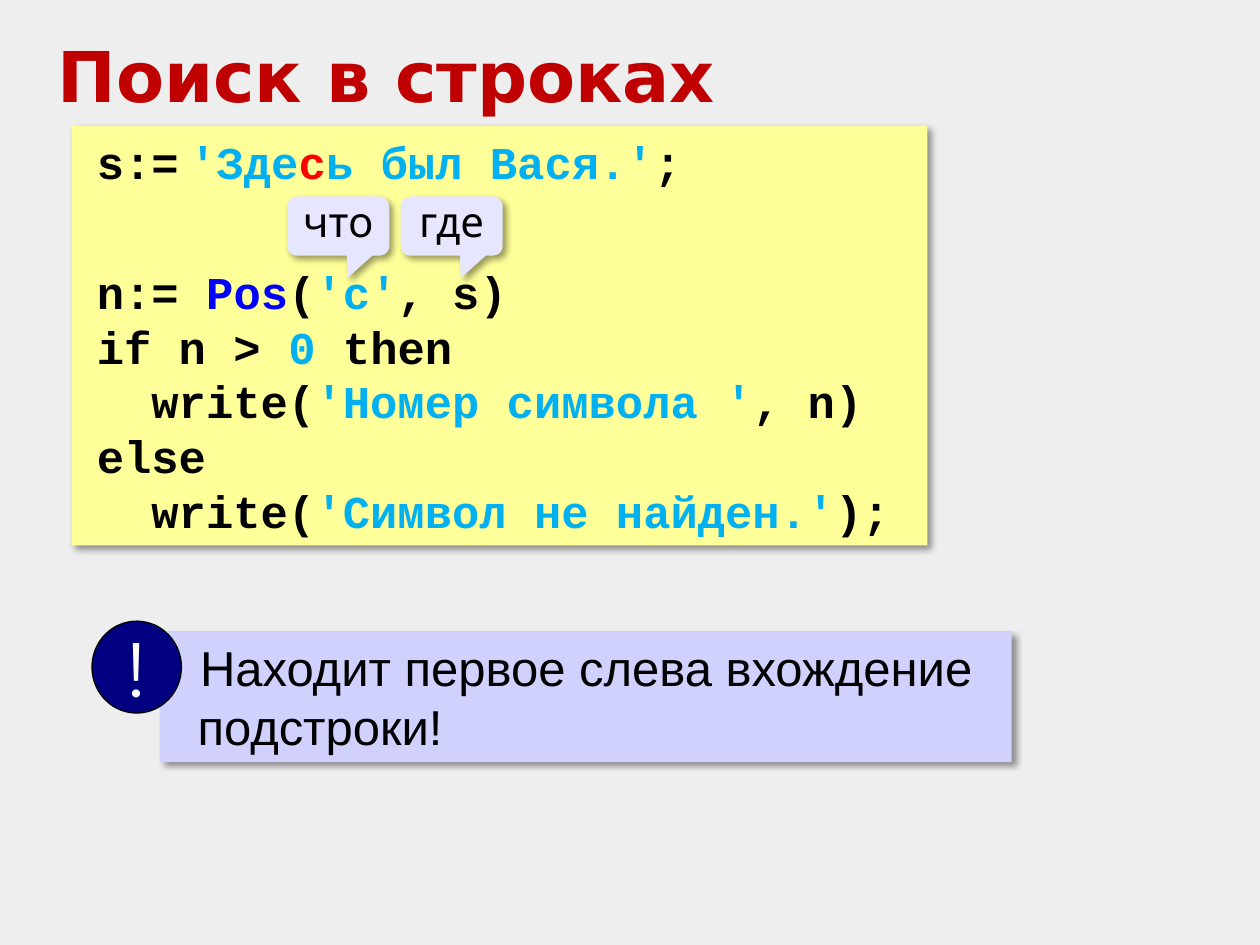
from lxml.etree import SubElement
from pptx import Presentation
from pptx.dml.color import RGBColor
from pptx.enum.shapes import MSO_SHAPE
from pptx.enum.text import MSO_ANCHOR, PP_ALIGN
from pptx.oxml.ns import qn
from pptx.util import Inches, Pt

COLORS = {
    "background": "EEEEEE", "title": "C00000", "code_box": "FFFF99",
    "callout": "E6E6FF", "note": "D1D1FF", "badge": "000080",
    "text": "000000", "literal": "00B0F0", "match": "FF0000",
    "function": "0000FF", "white": "FFFFFF",
}

# Each code line is a list of (text, color) pieces, with an optional size
CODE_LINES = [
    [("s:=", "text"), (" ", "text", 10), ("'Зде", "literal"), ("с", "match"),
     ("ь был Вася.'", "literal"), (";", "text")],
    [("n:= ", "text"), ("Pos", "function"), ("(", "text"),
     ("'с'", "literal"), (", s)", "text")],
    [("if n > ", "text"), ("0 ", "literal"), ("then", "text")],
    [("  write(", "text"), ("'Номер символа '", "literal"), (", n)", "text")],
    [("else", "text")],
    [("  write(", "text"), ("'Символ не найден.'", "literal"), (");", "text")],
]
CALLOUT_LINE = 1  # code line that leaves room above it for the callouts


def rgb(name):
    return RGBColor.from_string(COLORS[name])


def add_run(paragraph, text, font, size, color="text", bold=False):
    run = paragraph.add_run()
    run.text = text
    run.font.name = font
    run.font.size = Pt(size)
    run.font.bold = bold
    run.font.color.rgb = rgb(color)


def set_indent(paragraph, left, first):
    properties = paragraph._p.get_or_add_pPr()
    properties.set("marL", str(Inches(left)))
    properties.set("indent", str(Inches(first)))


def add_shadow(shape):
    effects = shape._element.spPr.find(qn("a:effectLst"))
    shadow = SubElement(effects, qn("a:outerShdw"), blurRad=str(Pt(4)),
                        dist=str(Pt(3)), dir="2700000", algn="tl", rotWithShape="0")
    color = SubElement(shadow, qn("a:srgbClr"), val=COLORS["text"])
    SubElement(color, qn("a:alpha"), val="40000")


def add_panel(slide, kind, box, fill, line=None, shadow=True,
              anchor=MSO_ANCHOR.TOP, align=PP_ALIGN.LEFT, wrap=True):
    shape = slide.shapes.add_shape(kind, *map(Inches, box))
    shape.fill.solid()
    shape.fill.fore_color.rgb = rgb(fill)
    if line:
        shape.line.color.rgb = rgb(line)
        shape.line.width = Pt(0.75)
    else:
        shape.line.fill.background()
    shape.shadow.inherit = False
    if shadow:
        add_shadow(shape)
    shape.text_frame.word_wrap = wrap
    shape.text_frame.vertical_anchor = anchor
    shape.text_frame.paragraphs[0].alignment = align
    return shape


def add_code(slide):
    shape = add_panel(slide, MSO_SHAPE.RECTANGLE, (0.57, 1, 6.79, 3.33),
                      "code_box", anchor=MSO_ANCHOR.MIDDLE)
    frame = shape.text_frame
    for index, pieces in enumerate(CODE_LINES):
        paragraph = frame.add_paragraph() if index else frame.paragraphs[0]
        paragraph.alignment = PP_ALIGN.LEFT
        paragraph.line_spacing = Pt(31.25)
        set_indent(paragraph, 0, 0.1)
        if index == CALLOUT_LINE:
            paragraph.space_before = Pt(43)
        for text, color, *size in pieces:
            add_run(paragraph, text, "Courier New", size[0] if size else 26,
                    color, bold=True)


def add_callout(slide, left, text):
    shape = add_panel(slide, MSO_SHAPE.ROUNDED_RECTANGULAR_CALLOUT,
                      (left, 1.56, 0.81, 0.47), "callout", align=PP_ALIGN.CENTER)
    for index, value in enumerate((0.088, 0.878, 0.167)):
        shape.adjustments[index] = value
    paragraph = shape.text_frame.paragraphs[0]
    paragraph.line_spacing = 0.8
    add_run(paragraph, text, "Cabin", 24)


def add_note(slide, text):
    panel = add_panel(slide, MSO_SHAPE.RECTANGLE, (1.27, 5.01, 6.76, 1.04), "note")
    paragraph = panel.text_frame.paragraphs[0]
    paragraph.line_spacing = Pt(33.75)
    set_indent(paragraph, 0.2, 0.02)
    add_run(paragraph, text, "Arial", 28)

    # Round exclamation badge over the corner
    badge = add_panel(slide, MSO_SHAPE.OVAL, (0.73, 4.93, 0.71, 0.73), "badge",
                      line="text", shadow=False, anchor=MSO_ANCHOR.MIDDLE,
                      align=PP_ALIGN.CENTER, wrap=False)
    add_run(badge.text_frame.paragraphs[0], "!", "Montserrat", 44, "white")


def add_title(slide, text):
    box = slide.shapes.add_textbox(*map(Inches, (0.36, 0.21, 9.28, 0.77)))
    box.text_frame.word_wrap = True
    add_run(box.text_frame.paragraphs[0], text, "DejaVu Sans", 40, "title", bold=True)


def main():
    presentation = Presentation()
    presentation.slide_width = Inches(10)
    presentation.slide_height = Inches(7.5)
    slide = presentation.slides.add_slide(presentation.slide_layouts[6])
    slide.background.fill.solid()
    slide.background.fill.fore_color.rgb = rgb("background")

    # Code with callouts naming the two arguments
    add_code(slide)
    for left, text in ((2.28, "что"), (3.18, "где")):
        add_callout(slide, left, text)

    # Remark and heading
    add_note(slide, "Находит первое слева вхождение подстроки!")
    add_title(slide, "Поиск в строках")
    presentation.save("out.pptx")


if __name__ == "__main__":
    main()
